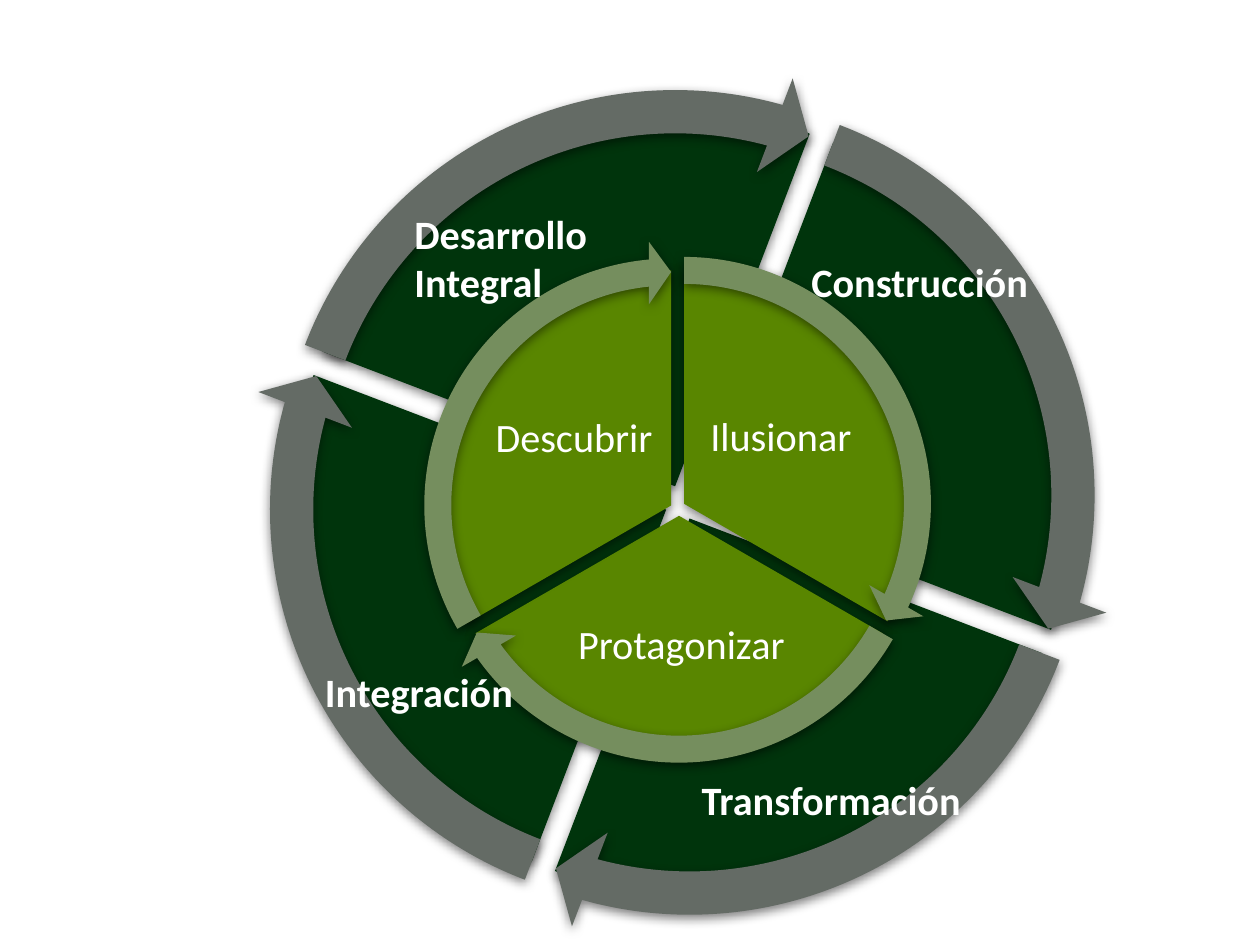
from dataclasses import dataclass
from math import cos, radians, sin

from lxml.etree import SubElement
from pptx import Presentation
from pptx.dml.color import RGBColor
from pptx.enum.shapes import MSO_SHAPE as Preset
from pptx.enum.text import MSO_ANCHOR as Anchor, MSO_AUTO_SIZE as AutoSize, PP_ALIGN as Align
from pptx.oxml.ns import qn
from pptx.util import Pt

# Angle adjustments count 60000ths of a degree, divided by 100000
FULL_TURN, TOP = 216, 162
BAND, HEAD_ANGLE, HEAD_WIDTH = 0.051, 3.275, 0.059


@dataclass(frozen=True)
class Theme:
    font: str = "Calibri"
    size: int = 23
    text: str = "FFFFFF"
    outer_sector: str = "00340C"
    outer_arrow: str = "646B65"
    inner_sector: str = "598600"
    inner_arrow: str = "758E5E"
    shadow: str = "000000"


@dataclass(frozen=True)
class Ring:
    """Equal sectors pushed outwards from a hub, each with a circular arrow."""
    hub: tuple
    count: int
    gap: float
    gap_angle: float
    sector_size: float
    arrow_size: float
    rotation: float = 0

    def center(self, index):
        angle = radians(self.gap_angle + index * 360 / self.count)
        return self.hub[0] + self.gap * cos(angle), self.hub[1] + self.gap * sin(angle)

    def angles(self, index):
        span = FULL_TURN / self.count
        start = TOP + index * span
        return start % FULL_TURN, (start + span) % FULL_TURN


class SlidePainter:
    def __init__(self, slide, theme):
        self.slide, self.theme = slide, theme

    def group(self):
        return self.slide.shapes.add_group_shape().shapes

    def _round_shape(self, group, preset, ring, index, size, color, adjustments):
        x, y = ring.center(index)
        shape = group.add_shape(preset, Pt(x - size / 2), Pt(y - size / 2), Pt(size), Pt(size))
        for position, value in enumerate(adjustments):
            shape.adjustments[position] = value
        shape.rotation = ring.rotation
        shape.fill.solid()
        shape.fill.fore_color.rgb = RGBColor.from_string(color)
        shape.line.fill.background()
        self._shadow(shape)
        return shape

    def _shadow(self, shape):
        shape.shadow.inherit = False
        effects = shape._element.spPr.find(qn("a:effectLst"))
        outer = SubElement(effects, qn("a:outerShdw"), blurRad=str(Pt(6)), dist=str(Pt(2)),
                           dir="5400000", algn="ctr", rotWithShape="0")
        color = SubElement(outer, qn("a:srgbClr"), val=self.theme.shadow)
        SubElement(color, qn("a:alpha"), val="50000")

    def sector(self, group, ring, index, color):
        return self._round_shape(group, Preset.PIE, ring, index, ring.sector_size, color,
                                 ring.angles(index))

    def arrow(self, group, ring, index, color):
        start, end = ring.angles(index)
        tip = (end - HEAD_ANGLE) % FULL_TURN
        return self._round_shape(group, Preset.CIRCULAR_ARROW, ring, index, ring.arrow_size, color,
                                 (BAND, HEAD_ANGLE, tip, start, HEAD_WIDTH))

    def _run(self, paragraph, text, bold=False):
        run = paragraph.add_run()
        run.text = text
        run.font.name, run.font.size = self.theme.font, Pt(self.theme.size)
        run.font.bold = bold
        run.font.color.rgb = RGBColor.from_string(self.theme.text)

    def sector_text(self, sector, text, shift_x, shift_y):
        """Center the text in its sector, shifted from the middle of the circle."""
        frame = sector.text_frame
        frame.word_wrap = False
        frame.vertical_anchor = Anchor.MIDDLE
        frame.margin_left, frame.margin_right = Pt(max(2 * shift_x, 0)), Pt(max(-2 * shift_x, 0))
        frame.margin_top, frame.margin_bottom = Pt(max(2 * shift_y, 0)), Pt(max(-2 * shift_y, 0))
        paragraph = frame.paragraphs[0]
        paragraph.alignment = Align.CENTER
        paragraph.line_spacing = 0.9
        self._run(paragraph, text)

    def label(self, lines, left, top, width, height):
        frame = self.slide.shapes.add_textbox(Pt(left), Pt(top), Pt(width), Pt(height)).text_frame
        frame.word_wrap = False
        frame.auto_size = AutoSize.SHAPE_TO_FIT_TEXT
        for index, line in enumerate(lines):
            paragraph = frame.add_paragraph() if index else frame.paragraphs[0]
            self._run(paragraph, line, bold=True)


def main():
    deck = Presentation()
    deck.slide_width, deck.slide_height = Pt(720), Pt(540)
    theme = Theme()
    painter = SlidePainter(deck.slides.add_slide(deck.slide_layouts[6]), theme)

    # Outer ring: four sectors, then their arrows
    outer = Ring(hub=(389.9, 287.1), count=4, gap=10.1, gap_angle=-24.1,
                 sector_size=431.3, arrow_size=485.3, rotation=20.9)
    outer_group = painter.group()
    for index in range(outer.count):
        painter.sector(outer_group, outer, index, theme.outer_sector)
    for index in range(outer.count):
        painter.arrow(outer_group, outer, index, theme.outer_arrow)

    # Inner ring: three named sectors, each below its arrow
    inner = Ring(hub=(387.5, 290.5), count=3, gap=4.3, gap_angle=-37,
                 sector_size=268.6, arrow_size=302.4)
    inner_group = painter.group()
    stages = [("Ilusionar", 55.4, -37.4), ("Protagonizar", 1.4, 74.9), ("Descubrir", -55.4, -37.4)]
    for index, (stage, shift_x, shift_y) in enumerate(stages):
        sector = painter.sector(inner_group, inner, index, theme.inner_sector)
        painter.sector_text(sector, stage, shift_x, shift_y)
        painter.arrow(inner_group, inner, index, theme.inner_arrow)

    # Labels of the outer ring
    painter.label(["Construcción"], 456.5, 143.3, 142.6, 36)
    painter.label(["Transformación"], 393.8, 439.2, 164.2, 35.3)
    painter.label(["Integración"], 178.6, 378, 123.1, 35.3)
    painter.label(["Desarrollo", "Integral"], 229.7, 115.9, 113.8, 63.4)

    deck.save("out.pptx")


if __name__ == "__main__":
    main()
